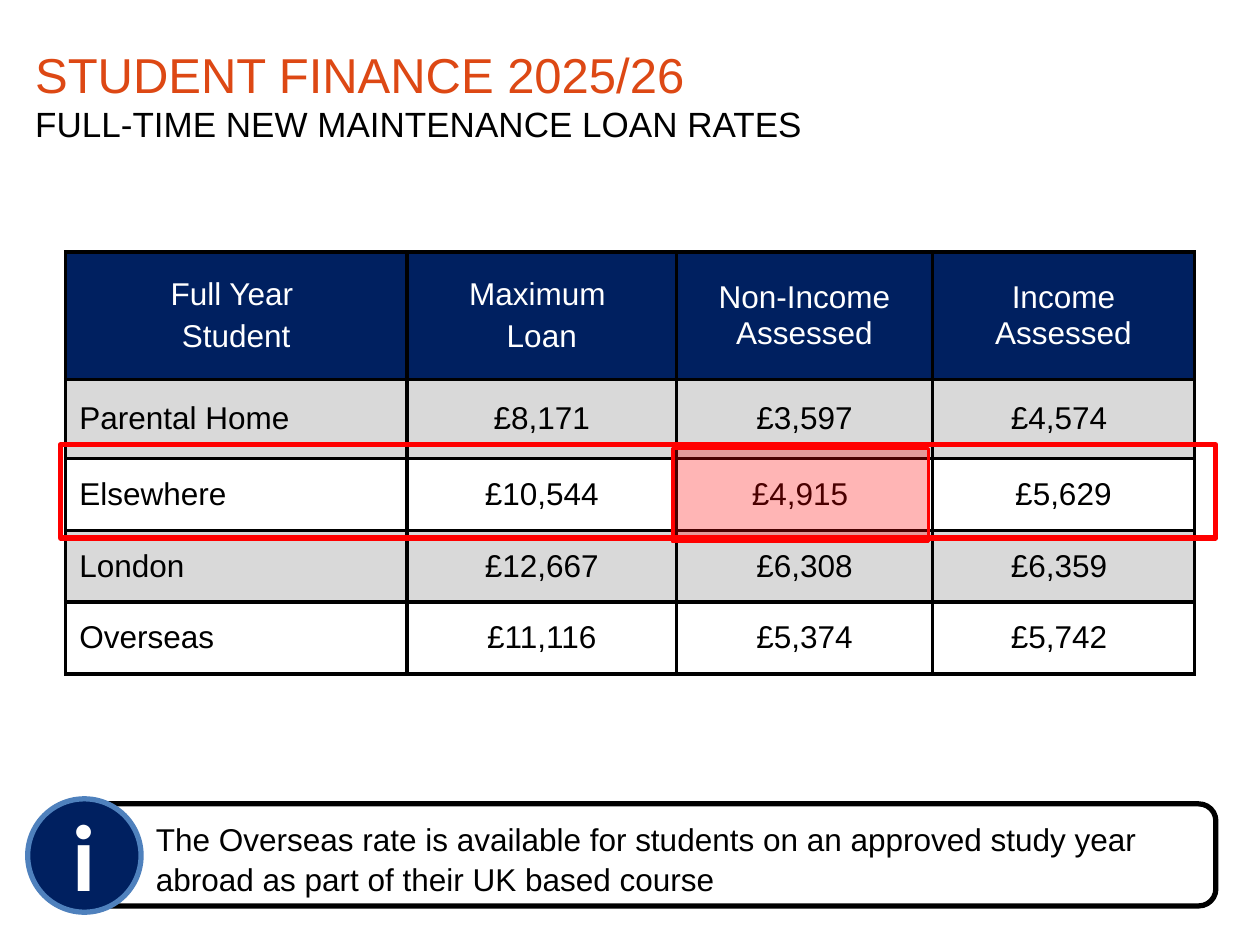
import lxml.etree
import pptx
import pptx.dml.color
import pptx.enum.shapes
import pptx.enum.text
import pptx.oxml.ns
import pptx.util

Inches = pptx.util.Inches
Pt = pptx.util.Pt
KIND = pptx.enum.shapes.MSO_SHAPE
ANCHOR = pptx.enum.text.MSO_ANCHOR
CENTER = pptx.enum.text.PP_ALIGN.CENTER
qn = pptx.oxml.ns.qn
NAVY, WHITE, BLACK, GREY, RED = "002060", "FFFFFF", "000000", "D9D9D9", "FF0000"

COLS = [2.71, 2.14, 2.03, 2.08]
ROWS = [1.01, 0.63, 0.57, 0.57, 0.57]
RATES = [
    [["Full Year ", "Student"], ["Maximum ", "Loan"], ["Non-Income Assessed"], ["Income Assessed"]],
    [["Parental Home"], ["£8,171"], ["£3,597"], ["£4,574 "]],
    [["Elsewhere"], ["£10,544"], ["£4,915 "], ["£5,629"]],
    [["London"], ["£12,667"], ["£6,308"], ["£6,359 "]],
    [["Overseas"], ["£11,116"], ["£5,374"], ["£5,742 "]],
]


def paint(item, color):
    """Give a fill or a font a solid colour."""
    if hasattr(item, "solid"):
        item.solid()
        item = item.fore_color
    else:
        item = item.color
    item.rgb = pptx.dml.color.RGBColor.from_string(color)


def add_run(para, text, size, color, face="Arial", bold=False):
    """Add one styled run to a paragraph."""
    run = para.add_run()
    run.text = text
    run.font.name, run.font.size, run.font.bold = face, Pt(size), bold
    paint(run.font, color)


def add_paras(frame, lines, size, color, **style):
    """Write each line as a paragraph and return the paragraphs."""
    for num, line in enumerate(lines):
        para = frame.add_paragraph() if num else frame.paragraphs[0]
        add_run(para, line, size, color, **style)
    return frame.paragraphs


def add_box(slide, left, top, width, height):
    """Add a wrapped text box and return its frame."""
    box = slide.shapes.add_textbox(Inches(left), Inches(top), Inches(width), Inches(height))
    box.text_frame.word_wrap = True
    return box.text_frame


def add_form(slide, kind, spot, line, weight, fill=None, alpha=None):
    """Add a preset shape with an outline and an optional fill."""
    form = slide.shapes.add_shape(kind, *map(Inches, spot))
    form.shadow.inherit = False
    paint(form.line.fill, line)
    form.line.width = Pt(weight)
    if fill is None:
        form.fill.background()
    else:
        paint(form.fill, fill)
    if alpha:
        tone = form.fill._xPr.find(qn("a:solidFill"))[0]
        lxml.etree.SubElement(tone, qn("a:alpha"), val=str(alpha * 1000))


def add_edges(cell, color, weight):
    """Draw all four borders of a table cell."""
    props = cell._tc.get_or_add_tcPr()
    for side in "LRTB":
        edge = lxml.etree.SubElement(props, qn("a:ln" + side), w=str(Pt(weight)))
        fill = lxml.etree.SubElement(edge, qn("a:solidFill"))
        lxml.etree.SubElement(fill, qn("a:srgbClr"), val=color)


def add_title(slide):
    """Add the two-line heading."""
    frame = add_box(slide, 0.28, 0.34, 8.17, 0.81)
    frame.margin_left = frame.margin_right = frame.margin_top = frame.margin_bottom = 0
    frame.vertical_anchor = ANCHOR.BOTTOM
    para = frame.paragraphs[0]
    add_run(para, "STUDENT FINANCE 2025/26", 28, "DD4814")
    para.add_line_break()
    add_run(para, "FULL-TIME NEW MAINTENANCE LOAN RATES", 20, BLACK)


def add_rates(slide):
    """Add the table of loan rates."""
    table = slide.shapes.add_table(
        len(ROWS), len(COLS), Inches(0.52), Inches(2), Inches(sum(COLS)), Inches(sum(ROWS))
    ).table
    for col, width in zip(table.columns, COLS):
        col.width = Inches(width)
    for r, height in enumerate(ROWS):
        table.rows[r].height = Inches(height)
        fill = NAVY if r == 0 else GREY if r % 2 else WHITE
        for c, lines in enumerate(RATES[r]):
            cell = table.cell(r, c)
            add_edges(cell, BLACK, 2.25)
            paint(cell.fill, fill)
            cell.vertical_anchor = ANCHOR.MIDDLE
            cell.margin_left = cell.margin_right = Inches(0.11)
            paras = add_paras(cell.text_frame, lines, 18, BLACK if r else WHITE)
            for num, para in enumerate(paras):
                if r == 0 or c:
                    para.alignment = CENTER
                if num:
                    para.space_before = Pt(3.6)


def add_note(slide):
    """Add the framed note with its round badge."""
    add_form(slide, KIND.ROUNDED_RECTANGLE, (0.45, 6.38, 9.2, 0.81), BLACK, 3, WHITE)
    lines = [
        "The Overseas rate is available for students on an approved study year",
        "abroad as part of their UK based course",
    ]
    for para in add_paras(add_box(slide, 1.06, 6.44, 8.56, 0.71), lines, 18, BLACK):
        para.line_spacing = 1.06
        props = para._p.get_or_add_pPr()
        props.set("marL", str(Inches(0.47)))
        props.set("indent", str(Inches(-0.39)))
    add_form(slide, KIND.OVAL, (0.22, 6.34, 0.9, 0.9), "4F81BD", 3, NAVY)
    add_paras(add_box(slide, 0.48, 6.28, 0.46, 1.01), ["i"], 54, WHITE, face="Calibri", bold=True)


def main():
    """Build the slide and save it."""
    deck = pptx.Presentation()
    deck.slide_width, deck.slide_height = Inches(10), Inches(7.5)
    slide = deck.slides.add_slide(deck.slide_layouts[6])
    add_title(slide)
    add_rates(slide)
    add_note(slide)
    add_form(slide, KIND.RECTANGLE, (0.48, 3.53, 9.17, 0.74), RED, 3)
    add_form(slide, KIND.RECTANGLE, (5.34, 3.56, 2.03, 0.74), RED, 2, RED, 29)
    deck.save("out.pptx")


if __name__ == "__main__":
    main()
